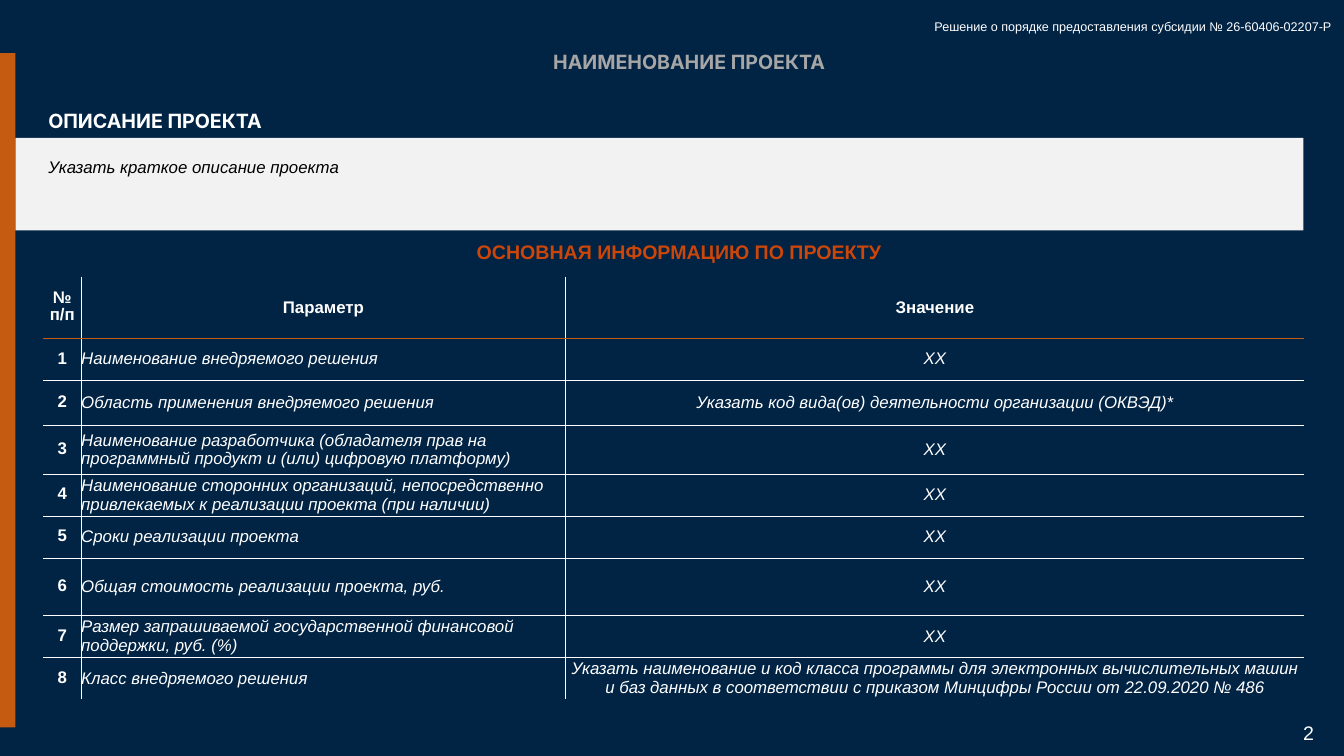
from dataclasses import dataclass

from lxml.etree import SubElement
from pptx import Presentation
from pptx.dml.color import RGBColor
from pptx.enum.shapes import MSO_SHAPE
from pptx.enum.text import MSO_ANCHOR, PP_ALIGN
from pptx.oxml.ns import qn
from pptx.util import Pt

PX = 12700
PLAIN_TABLE = "{2D5ABB26-0587-4C30-8999-92F81FD0307C}"


@dataclass(frozen=True)
class Theme:
    navy: str = "012344"
    white: str = "FFFFFF"
    black: str = "000000"
    panel: str = "F2F2F2"
    accent: str = "C55A11"
    orange: str = "CC460A"
    grey: str = "A6A6A6"
    body_font: str = "Arial"
    heading_font: str = "Inter"
    heading: float = 28
    body: float = 24
    note: float = 18


class ProjectSlide:
    def __init__(self, deck, theme):
        self.theme = theme
        self.slide = deck.slides.add_slide(deck.slide_layouts[6])
        background = self.slide.background.fill
        background.solid()
        background.fore_color.rgb = RGBColor.from_string(theme.navy)

    def fill_text(self, frame, wording, size, color, font=None, bold=False,
                  italic=False, align=PP_ALIGN.LEFT, spacing=None):
        paragraph = frame.paragraphs[0]
        paragraph.add_run().text = wording
        paragraph.alignment = align
        if spacing:
            paragraph.line_spacing = spacing
        style = paragraph.font
        style.size = Pt(size)
        style.name = font or self.theme.body_font
        style.bold = bold
        style.italic = italic
        style.color.rgb = RGBColor.from_string(color)

    def text(self, box, wording, size, color, margins=(7, 7), wrap=True,
             anchor=MSO_ANCHOR.TOP, **style):
        frame = self.slide.shapes.add_textbox(*(v * PX for v in box)).text_frame
        frame.word_wrap = wrap
        frame.vertical_anchor = anchor
        frame.margin_left = frame.margin_right = margins[0] * PX
        frame.margin_top = frame.margin_bottom = margins[1] * PX
        self.fill_text(frame, wording, size, color, **style)

    def rect(self, box, color):
        block = self.slide.shapes.add_shape(
            MSO_SHAPE.RECTANGLE, *(v * PX for v in box))
        block.shadow.inherit = False
        block.fill.solid()
        block.fill.fore_color.rgb = RGBColor.from_string(color)
        block.line.fill.background()

    def borders(self, cell, **colors):
        properties = cell._tc.get_or_add_tcPr()
        for position, side in enumerate("LRTB"):
            edge = SubElement(properties, qn(f"a:ln{side}"), w=str(PX))
            if side in colors:
                fill = SubElement(edge, qn("a:solidFill"))
                SubElement(fill, qn("a:srgbClr"), val=colors[side])
            else:
                SubElement(edge, qn("a:noFill"))
            properties.insert(position, edge)

    def cell(self, cell, wording, margins, **style):
        cell.fill.background()
        cell.vertical_anchor = MSO_ANCHOR.MIDDLE
        cell.margin_left = cell.margin_right = margins[0] * PX
        cell.margin_top = cell.margin_bottom = margins[1] * PX
        self.fill_text(cell.text_frame, wording, self.theme.body,
                       self.theme.white, **style)

    def table(self, left, top, widths, heights, rows):
        theme = self.theme
        table = self.slide.shapes.add_table(
            len(rows), len(widths), left * PX, top * PX,
            sum(widths) * PX, sum(heights) * PX).table
        table.first_row = table.horz_banding = False
        table._tbl.tblPr.find(qn("a:tableStyleId")).text = PLAIN_TABLE
        for column, width in zip(table.columns, widths):
            column.width = width * PX
        for row, height in zip(table.rows, heights):
            row.height = height * PX
        for r, row in enumerate(rows):
            for c, wording in enumerate(row):
                cell = table.cell(r, c)
                strong = r == 0 or c == 0
                self.cell(
                    cell, wording,
                    margins=(8, 4) if r == 0 else (7, 4) if c == 0 else (0, 0),
                    bold=strong, italic=not strong,
                    align=PP_ALIGN.LEFT if r and c == 1 else PP_ALIGN.CENTER,
                    spacing=0.9 if c == 0 else None)
                edges = {}
                if c > 0:
                    edges["L"] = theme.white
                if c < len(widths) - 1:
                    edges["R"] = theme.white
                if r > 0:
                    edges["T"] = theme.accent if r == 1 else theme.white
                if r < len(rows) - 1:
                    edges["B"] = theme.accent if r == 0 else theme.white
                self.borders(cell, **edges)


PARAMETERS = [
    ("Наименование внедряемого решения", "ХХ"),
    ("Область применения внедряемого решения",
     "Указать код вида(ов) деятельности организации (ОКВЭД)*"),
    ("Наименование разработчика (обладателя прав на программный продукт "
     "и (или) цифровую платформу)", "ХХ"),
    ("Наименование сторонних организаций, непосредственно привлекаемых "
     "к реализации проекта (при наличии)", "ХХ"),
    ("Сроки реализации проекта", "ХХ"),
    ("Общая стоимость реализации проекта, руб.", "ХХ"),
    ("Размер запрашиваемой государственной финансовой поддержки, руб. (%)",
     "ХХ"),
    ("Класс внедряемого решения",
     "Указать наименование и код класса программы для электронных "
     "вычислительных машин и баз данных в соответствии с приказом "
     "Минцифры России от 22.09.2020 № 486"),
]


def main():
    theme = Theme()
    deck = Presentation()
    deck.slide_width, deck.slide_height = 1920 * PX, 1080 * PX
    page = ProjectSlide(deck, theme)

    for top in (263, 197):
        page.rect((22, top, 1840, 66), theme.panel)
    page.text((1828, 1024, 58, 44), "2", theme.heading, theme.white,
              margins=(9, 9), anchor=MSO_ANCHOR.MIDDLE, align=PP_ALIGN.RIGHT)
    page.text((62, 149, 347, 48), "ОПИСАНИЕ ПРОЕКТА", theme.heading,
              theme.white, font=theme.heading_font, bold=True)
    page.rect((0, 76, 22, 963), theme.accent)
    page.text((138, 68, 1693, 42), "НАИМЕНОВАНИЕ ПРОЕКТА", theme.heading,
              theme.grey, margins=(7, 4), font=theme.heading_font, bold=True,
              align=PP_ALIGN.CENTER)
    page.text((62, 217, 492, 44), "Указать краткое описание проекта",
              theme.body, theme.black, italic=True)

    header = ("№ п/п", "Параметр", "Значение")
    numbered = [(str(n), *row) for n, row in enumerate(PARAMETERS, 1)]
    page.table(62, 395, (54, 692, 1055),
               (88, 60, 65, 69, 60, 60, 82, 60, 60), [header, *numbered])

    page.text((674, 336, 622, 48), "ОСНОВНАЯ ИНФОРМАЦИЮ ПО ПРОЕКТУ",
              theme.heading, theme.orange, bold=True)
    page.text((1328, 23, 592, 29),
              "Решение о порядке предоставления субсидии № 26-60406-02207-Р",
              theme.note, theme.white, margins=(7, 4), wrap=False)
    deck.save("out.pptx")


if __name__ == "__main__":
    main()
